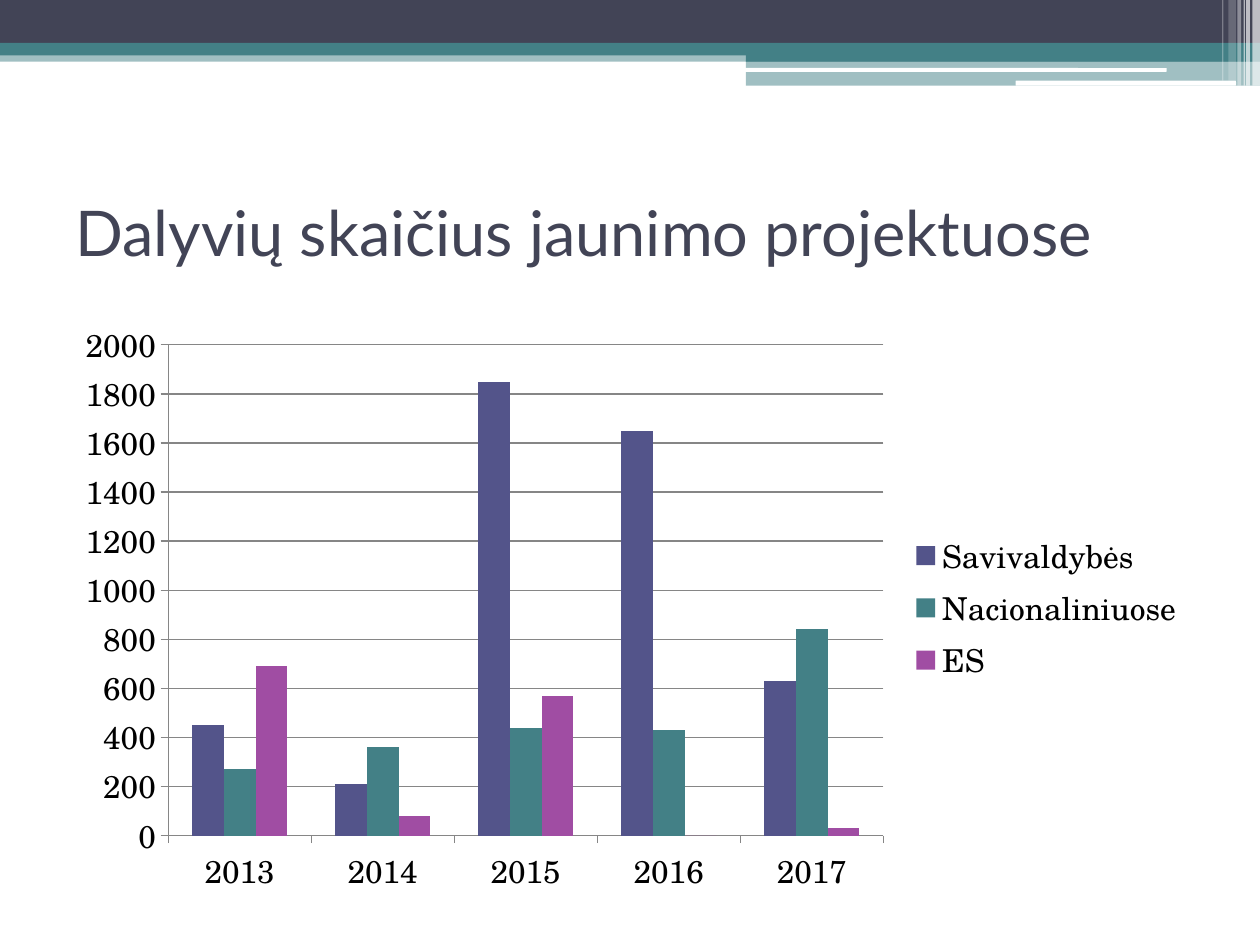
"""Build a slide with a banded header, a title and a clustered column chart."""
from dataclasses import dataclass

from pptx import Presentation
from pptx import util as u
from pptx.chart import data as chart_data
from pptx.dml.color import RGBColor
from pptx.enum import chart as charts, shapes, text
from pptx.oxml.xmlchemy import OxmlElement

COLOURS = {
    "ink": "424456", "teal": "438086", "white": "FFFFFF", "black": "000000",
    "grid": "868686", "indigo": "53548A", "purple": "A04DA3",
}
BODY_FONT = "TeX Gyre Schola"
TITLE_FONT = "Lato"


@dataclass(frozen=True)
class Band:
    left: float
    top: float
    width: float
    height: float
    colour: str
    opacity: int = 100
    rounded: bool = False


@dataclass(frozen=True)
class Series:
    name: str
    values: tuple[int, ...]
    colour: str


BANDS = (
    Band(0, 0.4, 10, 0.09, "teal", 50),
    Band(0, 0, 10, 0.34, "ink"),
    Band(0, 0.34, 10, 0.1, "teal"),
    Band(5.92, 0.39, 4.08, 0.1, "teal"),
    Band(5.92, 0.48, 4.08, 0.2, "teal", 50),
    Band(5.91, 0.54, 3.35, 0.03, "white", rounded=True),
    Band(8.06, 0.64, 1.75, 0.04, "white", rounded=True),
    Band(9.94, 0, 0.06, 0.68, "white", 65),
    Band(9.89, 0, 0.03, 0.68, "white", 65),
    Band(9.87, 0, 0.01, 0.68, "white", 60),
    Band(9.82, 0, 0.03, 0.68, "white", 40),
    Band(9.75, 0, 0.06, 0.64, "white", 20),
    Band(9.7, 0, 0.01, 0.64, "white", 30),
)
YEARS = ("2013", "2014", "2015", "2016", "2017")
PARTICIPANTS = (
    Series("Savivaldybės", (450, 210, 1850, 1650, 630), "indigo"),
    Series("Nacionaliniuose", (270, 360, 440, 430, 840), "teal"),
    Series("ES", (690, 80, 570, 0, 30), "purple"),
)


def colour_of(name: str) -> RGBColor:
    """Return the named colour."""
    return RGBColor.from_string(COLOURS[name])


def draw_band(page, band: Band) -> None:
    """Draw one header band."""
    kind = shapes.MSO_SHAPE.ROUNDED_RECTANGLE if band.rounded else shapes.MSO_SHAPE.RECTANGLE
    box = page.shapes.add_shape(kind, u.Inches(band.left), u.Inches(band.top),
                                u.Inches(band.width), u.Inches(band.height))
    box.shadow.inherit = False
    box.line.fill.background()
    box.fill.solid()
    box.fill.fore_color.rgb = colour_of(band.colour)
    if band.opacity < 100:
        alpha = OxmlElement("a:alpha")
        alpha.set("val", str(band.opacity * 1000))
        box.fill._xPr.find(".//{*}srgbClr").append(alpha)


def draw_title(page, wording: str) -> None:
    """Draw the slide title."""
    box = page.shapes.add_textbox(u.Inches(0.5), u.Inches(1.25), u.Inches(9), u.Inches(1.17))
    frame = box.text_frame
    frame.word_wrap = True
    frame.vertical_anchor = text.MSO_ANCHOR.MIDDLE
    span = frame.paragraphs[0].add_run()
    span.text = wording
    span.font.name = TITLE_FONT
    span.font.size = u.Pt(36)
    span.font.color.rgb = colour_of("ink")


def draw_chart(page, years: tuple[str, ...], groups: tuple[Series, ...]) -> None:
    """Draw the participant column chart."""
    numbers = chart_data.CategoryChartData()
    numbers.categories = years
    for group in groups:
        numbers.add_series(group.name, group.values)
    chart = page.shapes.add_chart(
        charts.XL_CHART_TYPE.COLUMN_CLUSTERED, u.Inches(0.5), u.Inches(2.46),
        u.Inches(9), u.Inches(4.73), numbers).chart
    chart.has_title = False
    chart.font.name = BODY_FONT
    chart.font.size = u.Pt(18)
    chart.font.color.rgb = colour_of("black")
    chart.has_legend = True
    chart.legend.position = charts.XL_LEGEND_POSITION.RIGHT
    chart.legend.include_in_layout = False

    plot = chart.plots[0]
    plot.gap_width = 150
    plot.overlap = 0
    plot.vary_by_categories = False
    for column, group in zip(plot.series, groups):
        column.invert_if_negative = False
        column.format.fill.solid()
        column.format.fill.fore_color.rgb = colour_of(group.colour)

    chart.value_axis.minimum_scale = 0
    chart.value_axis.maximum_scale = 2000
    chart.value_axis.major_unit = 200
    chart.value_axis.has_major_gridlines = True
    for axis in (chart.category_axis, chart.value_axis):
        axis.major_tick_mark = charts.XL_TICK_MARK.OUTSIDE
    for rule in (chart.category_axis, chart.value_axis, chart.value_axis.major_gridlines):
        rule.format.line.color.rgb = colour_of("grid")
        rule.format.line.width = u.Pt(0.75)


def main() -> None:
    """Assemble and save the deck."""
    deck = Presentation()
    deck.slide_width, deck.slide_height = u.Inches(10), u.Inches(7.5)
    page = deck.slides.add_slide(deck.slide_layouts[6])
    for band in BANDS:
        draw_band(page, band)
    draw_title(page, "Dalyvių skaičius jaunimo projektuose")
    draw_chart(page, YEARS, PARTICIPANTS)
    deck.save("out.pptx")


if __name__ == "__main__":
    main()
